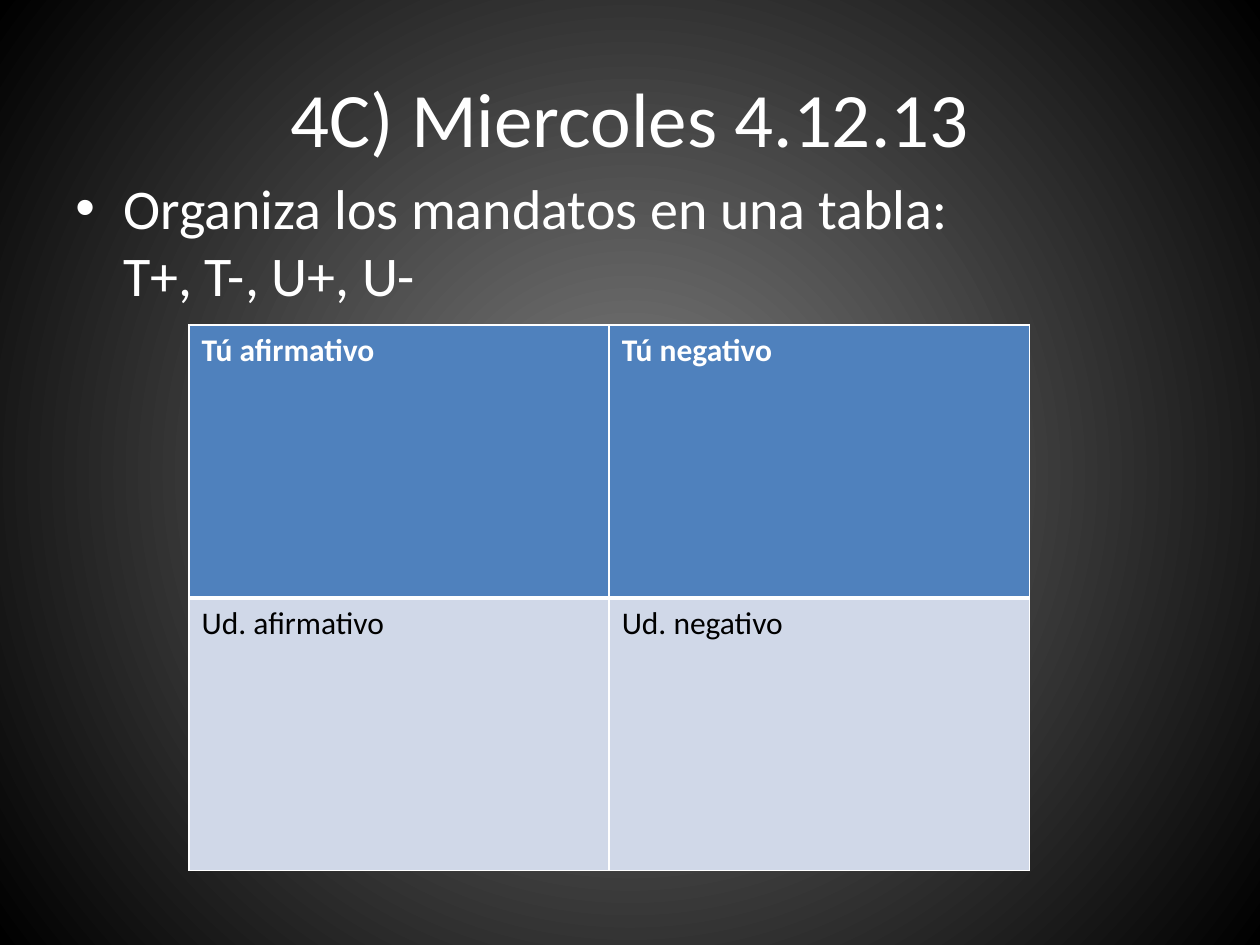
from lxml.etree import SubElement as Sub
from pptx import Presentation
from pptx.dml.color import RGBColor as Rgb
from pptx.enum.text import MSO_ANCHOR as Anchor, PP_ALIGN as Align
from pptx.oxml.ns import qn
from pptx.util import Inches, Pt

HUES = {
    "white": "FFFFFF",
    "black": "000000",
    "gray": "7F7F7F",
    "blue": "4F81BD",
    "pale": "D0D8E8",
}


def tint(name):
    return Rgb.from_string(HUES[name])


class Deck:
    font = "Calibri"

    def __init__(self, wide, high):
        self.prs = Presentation()
        self.prs.slide_width = Inches(wide)
        self.prs.slide_height = Inches(high)
        self.slide = self.prs.slides.add_slide(self.prs.slide_layouts[6])

    def glow(self, inner, outer):
        fill = self.slide.background.fill
        fill.gradient()
        for stop, name, spot in zip(fill.gradient_stops, (inner, outer), (0, 1)):
            stop.color.rgb = tint(name)
            stop.position = spot
        line = self.slide.element.find(".//" + qn("a:lin"))
        grad = line.getparent()
        grad.remove(line)
        ring = Sub(grad, qn("a:path"), path="circle")
        Sub(ring, qn("a:fillToRect"), l="50000", t="50000", r="50000", b="50000")

    def run(self, para, text, size, hue, bold=False):
        run = para.add_run()
        run.text = text
        run.font.name = self.font
        run.font.size = Pt(size)
        run.font.bold = bold
        run.font.color.rgb = tint(hue)

    def box(self, left, top, wide, high, anchor):
        area = (Inches(v) for v in (left, top, wide, high))
        frame = self.slide.shapes.add_textbox(*area).text_frame
        frame.word_wrap = True
        frame.vertical_anchor = anchor
        return frame.paragraphs[0]

    def title(self, text, *area):
        para = self.box(*area, Anchor.MIDDLE)
        para.alignment = Align.CENTER
        self.run(para, text, 44, "white")

    def bullet(self, lines, *area):
        para = self.box(*area, Anchor.TOP)
        props = para._p.get_or_add_pPr()
        props.set("marL", str(Inches(0.38)))
        props.set("indent", str(-Inches(0.38)))
        Sub(props, qn("a:buFont"), typeface="Arial")
        Sub(props, qn("a:buChar"), char="•")
        for i, text in enumerate(lines):
            if i:
                para.add_line_break()
            self.run(para, text, 32, "white")

    def edge(self, cell, side, width):
        props = cell._tc.get_or_add_tcPr()
        line = Sub(props, qn("a:" + side), w=str(Pt(width)))
        solid = Sub(line, qn("a:solidFill"))
        Sub(solid, qn("a:srgbClr"), val=HUES["white"])

    def table(self, rows, left, top, wide, high):
        area = (Inches(v) for v in (left, top, wide, high))
        grid = self.slide.shapes.add_table(len(rows), len(rows[0]), *area).table
        for r, row in enumerate(rows):
            head = r == 0
            for c, text in enumerate(row):
                cell = grid.cell(r, c)
                hue = "white" if head else "black"
                self.run(cell.text_frame.paragraphs[0], text, 18, hue, head)
                for side in ("lnL", "lnR", "lnT", "lnB"):
                    thick = side == ("lnB" if head else "lnT")
                    self.edge(cell, side, 3 if thick else 1)
                cell.fill.solid()
                cell.fill.fore_color.rgb = tint("blue" if head else "pale")


def main():
    deck = Deck(10, 7.5)
    deck.glow("gray", "black")
    deck.title("4C) Miercoles 4.12.13", 0.5, 0.3, 9, 1.25)
    lines = ["Organiza los mandatos en una tabla:", "T+, T-, U+, U-"]
    deck.bullet(lines, 0.5, 1.33, 9, 1.08)
    rows = [
        ["Tú afirmativo", "Tú negativo"],
        ["Ud. afirmativo", "Ud. negativo"],
    ]
    deck.table(rows, 1.5, 2.58, 6.67, 4.33)
    deck.prs.save("out.pptx")


if __name__ == "__main__":
    main()
